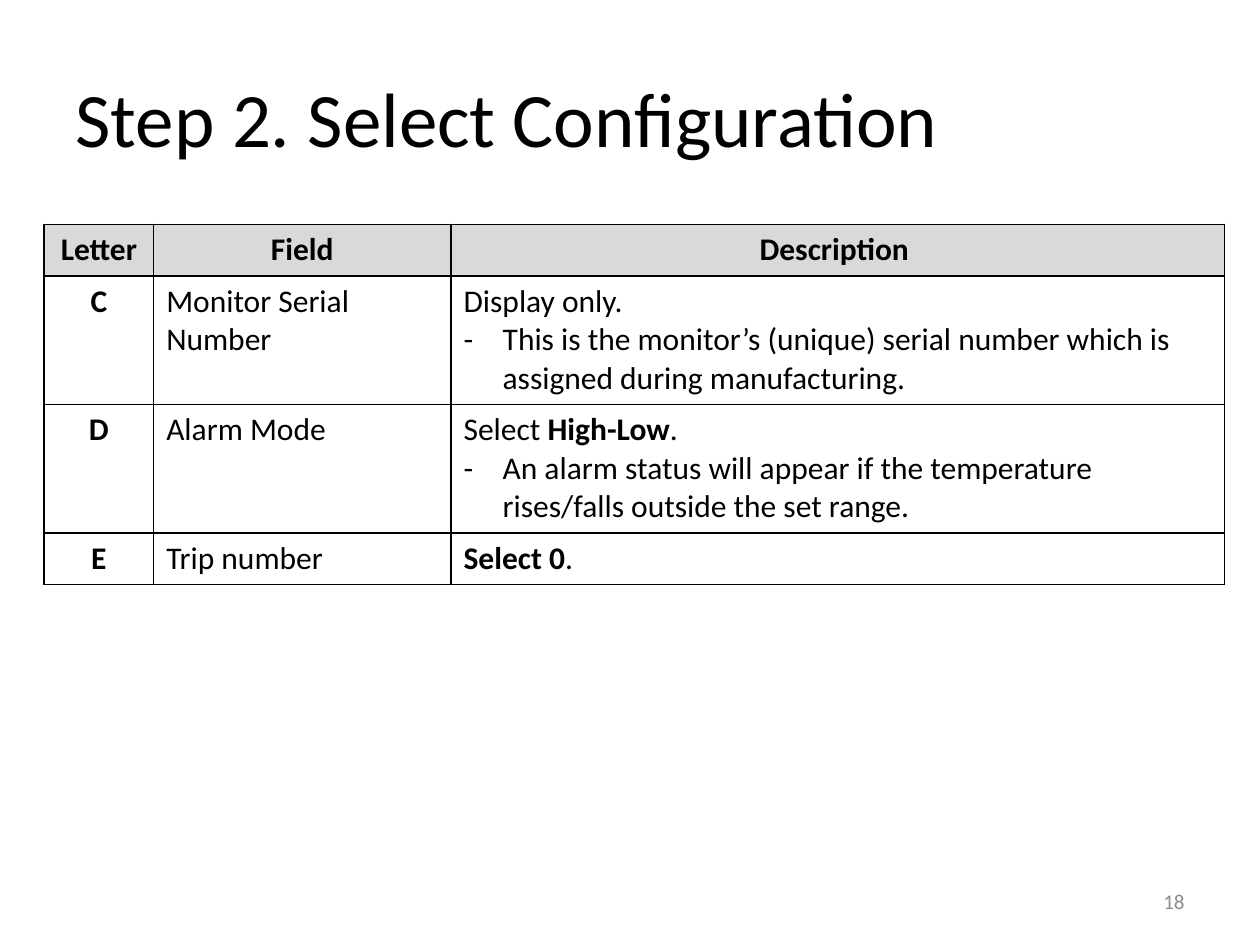
from lxml.etree import SubElement as Sub
from pptx import Presentation
from pptx.dml.color import RGBColor
from pptx.enum.text import MSO_ANCHOR as Anchor, PP_ALIGN as Align
from pptx.oxml.ns import qn
from pptx.util import Inches, Pt

TITLE = "Step 2. Select Configuration"
PAGE = "18"
HEAD = ("Letter", "Field", "Description ")
ROWS = [
    ("C", "Monitor Serial Number", [("Display only.", False)],
     "This is the monitor’s (unique) serial number which is assigned during manufacturing."),
    ("D", "Alarm Mode", [("Select ", False), ("High-Low", True), (".", False)],
     "An alarm status will appear if the temperature rises/falls outside the set range."),
    ("E", "Trip number", [("Select 0", True), (".", False)], None),
]
COLS = (0.87, 2.36, 6.14)
LOW, TALL = 0.41, 1.02
INDENT = Inches(0.31)
FONT = "Calibri"
BLACK = RGBColor(0, 0, 0)
GREY = RGBColor(0x8C, 0x8C, 0x8C)
SHADE = RGBColor(0xD9, 0xD9, 0xD9)


def write(para, runs, size=18, color=BLACK, align=Align.LEFT):
    para.alignment = align
    for text, bold in runs:
        run = para.add_run()
        run.text = text
        font = run.font
        font.name, font.size, font.bold = FONT, Pt(size), bold
        font.color.rgb = color


def dash(para):
    props = para._p.get_or_add_pPr()
    props.set("marL", str(INDENT))
    props.set("indent", str(-INDENT))
    Sub(props, qn("a:buFont"), typeface=FONT)
    Sub(props, qn("a:buChar"), char="-")


def frame(cell, shade):
    props = cell._tc.get_or_add_tcPr()
    for side in ("lnL", "lnR", "lnT", "lnB"):
        line = Sub(props, qn("a:" + side), w=str(Pt(1)))
        fill = Sub(line, qn("a:solidFill"))
        Sub(fill, qn("a:srgbClr"), val=str(BLACK))
    if shade:
        cell.fill.solid()
        cell.fill.fore_color.rgb = SHADE
    else:
        cell.fill.background()


def build():
    deck = Presentation()
    deck.slide_width, deck.slide_height = Inches(10), Inches(7.5)
    slide = deck.slides.add_slide(deck.slide_layouts[5])

    title = slide.shapes.title
    title.left, title.top = Inches(0.5), Inches(0.3)
    title.width, title.height = Inches(9), Inches(1.25)
    title.text_frame.vertical_anchor = Anchor.MIDDLE
    write(title.text_frame.paragraphs[0], [(TITLE, False)], 44)

    highs = [LOW] + [TALL if row[3] else LOW for row in ROWS]
    table = slide.shapes.add_table(
        len(highs), len(COLS), Inches(0.35), Inches(1.78),
        Inches(sum(COLS)), Inches(sum(highs))).table
    for col, wide in zip(table.columns, COLS):
        col.width = Inches(wide)
    for row, high in zip(table.rows, highs):
        row.height = Inches(high)
        for cell in row.cells:
            frame(cell, high is highs[0] and row is None)
    for i, text in enumerate(HEAD):
        cell = table.cell(0, i)
        cell.fill.solid()
        cell.fill.fore_color.rgb = SHADE
        write(cell.text_frame.paragraphs[0], [(text, True)], align=Align.CENTER)
    for r, (letter, field, lead, note) in enumerate(ROWS, 1):
        parts = [([(letter, True)], Align.CENTER), ([(field, False)], Align.LEFT),
                 (lead, Align.LEFT)]
        for c, (runs, align) in enumerate(parts):
            write(table.cell(r, c).text_frame.paragraphs[0], runs, align=align)
        if note:
            para = table.cell(r, 2).text_frame.add_paragraph()
            write(para, [(note, False)])
            dash(para)

    box = slide.shapes.add_textbox(Inches(7.17), Inches(6.95), Inches(2.33), Inches(0.4))
    box.text_frame.word_wrap = True
    box.text_frame.vertical_anchor = Anchor.MIDDLE
    write(box.text_frame.paragraphs[0], [(PAGE, False)], 12, GREY, Align.RIGHT)
    deck.save("out.pptx")


if __name__ == "__main__":
    build()
